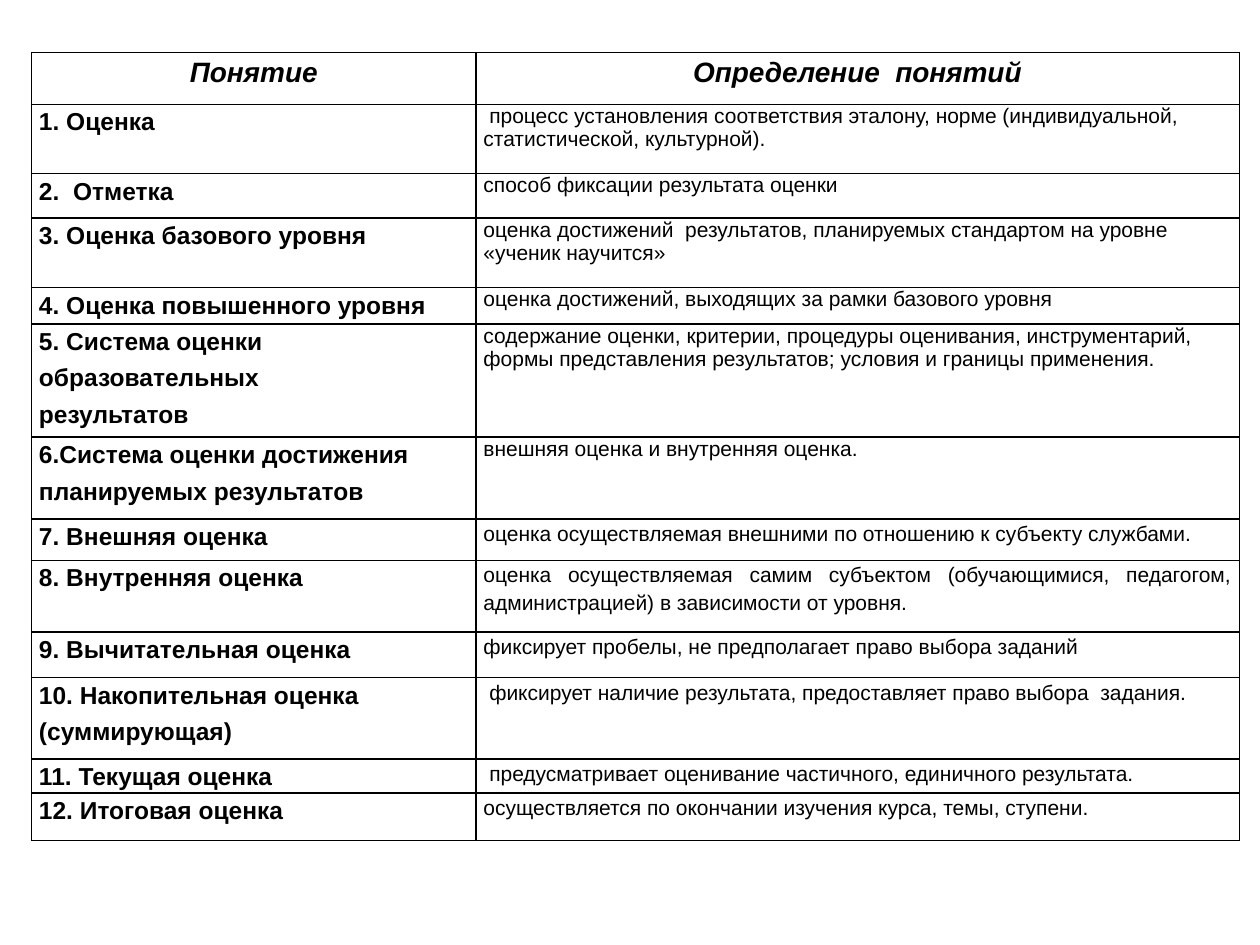
from lxml.etree import SubElement
from pptx import Presentation
from pptx.dml.color import RGBColor
from pptx.enum.text import PP_ALIGN as Align
from pptx.oxml.ns import qn
from pptx.util import Pt

COLORS = {"text": "000000", "border": "000000"}
FONT = "Arial"
LEFT, CENTER, JUSTIFY = Align.LEFT, Align.CENTER, Align.JUSTIFY

# Row height, term lines, hanging indent, definition, its alignment and line spacing
ROWS = [
    (39.7, ["1. Оценка"], 21.6,
     " процесс установления соответствия эталону, норме (индивидуальной, "
     "статистической, культурной).", LEFT, 1),
    (25.4, ["2.  Отметка"], 0, "способ фиксации результата оценки", LEFT, 1),
    (39.7, ["3. Оценка базового уровня"], 0,
     "оценка достижений  результатов, планируемых стандартом на уровне "
     "«ученик научится»", LEFT, 1),
    (20.8, ["4. Оценка повышенного уровня"], 0,
     "оценка достижений, выходящих за рамки базового уровня", LEFT, 1),
    (64.7, ["5. Система оценки", "образовательных", "результатов"], 18,
     "содержание оценки, критерии, процедуры оценивания, инструментарий, "
     "формы представления результатов; условия и границы применения.", LEFT, 1),
    (46.8, ["6.Система оценки достижения", "планируемых результатов"], 18,
     "внешняя оценка и внутренняя оценка.", LEFT, 1),
    (23.6, ["7. Внешняя оценка"], 0,
     "оценка осуществляемая внешними по отношению к субъекту службами.", JUSTIFY, 1.15),
    (41, ["8. Внутренняя оценка"], 0,
     "оценка осуществляемая самим субъектом (обучающимися, педагогом, "
     "администрацией) в зависимости от уровня.", JUSTIFY, 1.15),
    (26.1, ["9. Вычитательная оценка"], 0,
     "фиксирует пробелы, не предполагает право выбора заданий", JUSTIFY, 1.15),
    (46.5, ["10. Накопительная оценка", "(суммирующая)"], 18,
     " фиксирует наличие результата, предоставляет право выбора  задания.", LEFT, 1.15),
    (19.4, ["11. Текущая оценка"], 0,
     " предусматривает оценивание частичного, единичного результата.", JUSTIFY, 1.15),
    (27.2, ["12. Итоговая оценка"], 0,
     "осуществляется по окончании изучения курса, темы, ступени.", JUSTIFY, 1.15),
]
HEADER_HEIGHT = 29.6
COLUMN_WIDTHS = [254, 436.2]


def format_cell(cell):
    cell.margin_left = cell.margin_right = Pt(4.3)
    cell.margin_top = cell.margin_bottom = Pt(0)
    properties = cell._tc.get_or_add_tcPr()
    for side in ("a:lnL", "a:lnR", "a:lnT", "a:lnB"):
        line = SubElement(properties, qn(side), w=str(Pt(1)))
        fill = SubElement(line, qn("a:solidFill"))
        SubElement(fill, qn("a:srgbClr"), val=COLORS["border"])
    cell.fill.background()


def write_lines(cell, lines, size, alignment=LEFT, spacing=1.15, hanging=0,
                bold=False, italic=False):
    for index, text in enumerate(lines):
        frame = cell.text_frame
        paragraph = frame.add_paragraph() if index else frame.paragraphs[0]
        paragraph.alignment = alignment
        paragraph.line_spacing = float(spacing)
        properties = paragraph._p.get_or_add_pPr()
        properties.set("marL", str(Pt(hanging)))
        properties.set("indent", str(-Pt(hanging)))
        # Space before as a share of the text size
        before = SubElement(properties, qn("a:spcBef"))
        SubElement(before, qn("a:spcPct"), val="20000")
        run = paragraph.add_run()
        run.text = text
        run.font.name = FONT
        run.font.size = Pt(size)
        run.font.bold = bold
        run.font.italic = italic
        run.font.color.rgb = RGBColor.from_string(COLORS["text"])


# Slide
presentation = Presentation()
presentation.slide_width, presentation.slide_height = Pt(720), Pt(540)
slide = presentation.slides.add_slide(presentation.slide_layouts[6])

# Table grid
heights = [HEADER_HEIGHT] + [row[0] for row in ROWS]
table = slide.shapes.add_table(
    len(heights), len(COLUMN_WIDTHS), Pt(18), Pt(30),
    Pt(sum(COLUMN_WIDTHS)), Pt(sum(heights))).table
for column, width in zip(table.columns, COLUMN_WIDTHS):
    column.width = Pt(width)
for row, height in zip(table.rows, heights):
    row.height = Pt(height)
for cell in table.iter_cells():
    format_cell(cell)

# Header
for column, (title, hanging) in enumerate([("Понятие", 21.6), ("Определение  понятий", 0)]):
    write_lines(table.cell(0, column), [title], 16, CENTER, hanging=hanging,
                bold=True, italic=True)

# Terms and definitions
for index, (_, term, hanging, definition, alignment, spacing) in enumerate(ROWS, 1):
    write_lines(table.cell(index, 0), term, 14, hanging=hanging, bold=True)
    write_lines(table.cell(index, 1), [definition], 12, alignment, spacing)

presentation.save("out.pptx")
